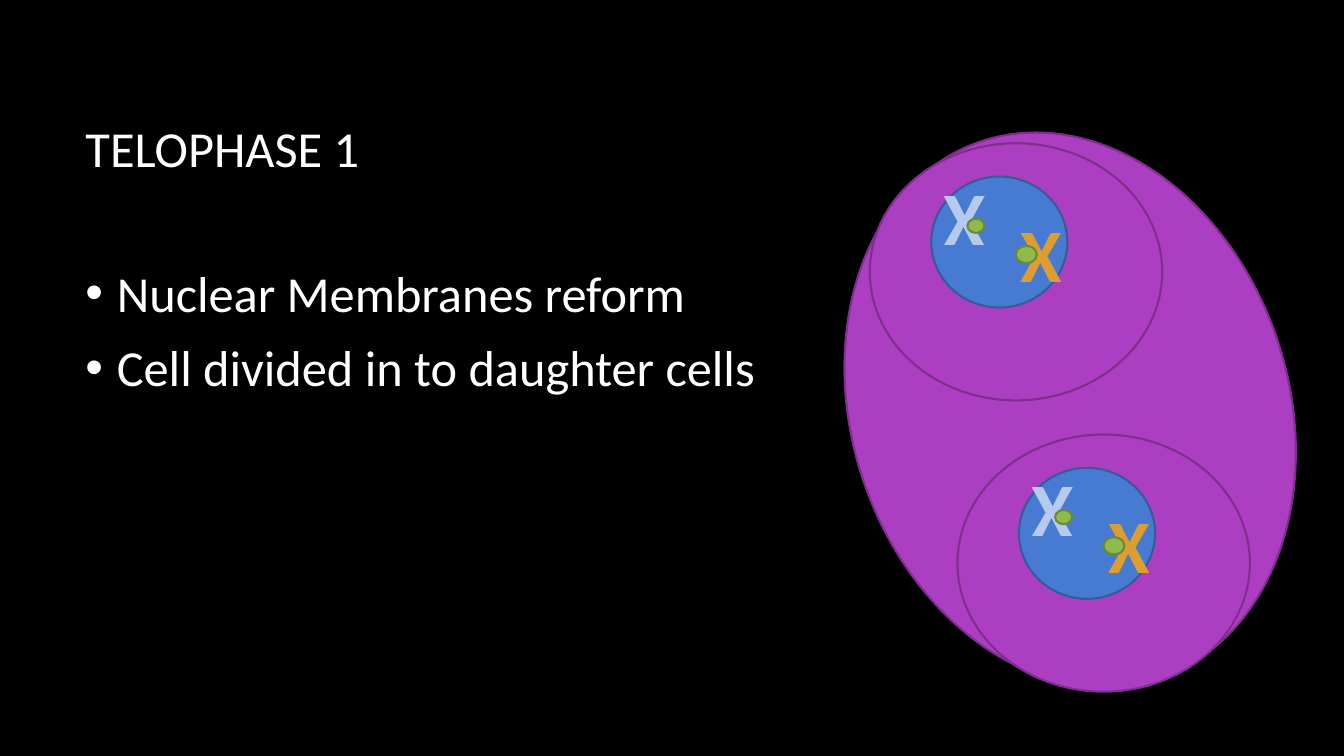
from typing import NamedTuple

import pptx
import pptx.dml.color
import pptx.enum.shapes
import pptx.enum.text
import pptx.oxml
import pptx.util
from pptx.util import Cm, Pt

FONT = "Calibri"
WHITE = "FFFFFF"
NS = 'xmlns:a="http://schemas.openxmlformats.org/drawingml/2006/main"'


class Box(NamedTuple):
    left: float
    top: float
    width: float
    height: float


class Oval(NamedTuple):
    box: Box
    fill: str
    line: str
    rotation: float = 0


class Chromosome(NamedTuple):
    box: Box
    color: str
    outline: str
    outline_pt: float
    rotation: float = 0


MEMBRANE = ("AC3EC1", "7F2E8F")
CENTROMERE = ("90BA4C", "6B8A38")
PARENT_CELL = Oval(Box(21.46, 3.2, 11.02, 14.25), *MEMBRANE, rotation=-18.2)

# Parts of a daughter cell, placed from its top left corner
DAUGHTER_PARTS = (
    Oval(Box(0, 0, 7.37, 6.48), *MEMBRANE),
    Oval(Box(1.55, 0.84, 3.43, 3.3), "477BD1", "355B9B"),
    Chromosome(Box(3.56, 1.47, 0.66, 2.57), "DD9D31", "000000", 0.75),
    Chromosome(Box(2.26, 0.79, 0.91, 2.57), "B5CAED", "477BD1", 1.75, 180),
    Oval(Box(3.68, 2.59, 0.53, 0.43), *CENTROMERE),
    Oval(Box(2.46, 1.9, 0.43, 0.36), *CENTROMERE),
)
DAUGHTER_CELLS = ((21.92, 3.61), (24.13, 10.95))


def rgb(value: str) -> pptx.dml.color.RGBColor:
    return pptx.dml.color.RGBColor.from_string(value)


def set_all(target, values: dict) -> None:
    for name, value in values.items():
        setattr(target, name, value)


def format_font(font, color: str, **values) -> None:
    set_all(font, {"name": FONT, **values})
    font.color.rgb = rgb(color)


def place(box: Box, x: float = 0, y: float = 0) -> tuple:
    """Return the box in slide units, moved by x and y."""
    return Cm(box.left + x), Cm(box.top + y), Cm(box.width), Cm(box.height)


def add_oval(s, oval: Oval, x: float = 0, y: float = 0) -> None:
    sp = s.shapes.add_shape(pptx.enum.shapes.MSO_SHAPE.OVAL, *place(oval.box, x, y))
    sp.rotation = oval.rotation
    sp.shadow.inherit = False
    sp.fill.solid()
    sp.fill.fore_color.rgb = rgb(oval.fill)
    sp.line.color.rgb = rgb(oval.line)
    sp.line.width = Pt(1.5)


def add_chromosome(s, c: Chromosome, x: float, y: float) -> None:
    sp = s.shapes.add_textbox(*place(c.box, x, y))
    sp.rotation = c.rotation
    set_all(sp.text_frame, {
        "word_wrap": True,
        "auto_size": pptx.enum.text.MSO_AUTO_SIZE.SHAPE_TO_FIT_TEXT,
    })
    p = sp.text_frame.paragraphs[0]
    p.alignment = pptx.enum.text.PP_ALIGN.CENTER
    r = p.add_run()
    r.text = "X"
    format_font(r.font, c.color, size=Pt(54), bold=True)
    r.font._element.insert(0, pptx.oxml.parse_xml(
        f'<a:ln {NS} w="{Pt(c.outline_pt)}"><a:solidFill>'
        f'<a:srgbClr val="{c.outline}"/></a:solidFill></a:ln>'))


def add_bullet(p) -> None:
    pPr = p._p.get_or_add_pPr()
    pPr.set("marL", str(Cm(0.79)))
    pPr.set("indent", str(-Cm(0.79)))
    for xml in (f'<a:buClr {NS}><a:srgbClr val="{WHITE}"/></a:buClr>',
                f'<a:buFont {NS} typeface="Arial"/>',
                f'<a:buChar {NS} char="•"/>'):
        pPr.append(pptx.oxml.parse_xml(xml))


def fill_placeholder(sp, box: Box, lines: list[str], bullets: bool) -> None:
    left, top, width, height = place(box)
    set_all(sp, {"left": left, "top": top, "width": width, "height": height})
    tf = sp.text_frame
    tf.text = "\n".join(lines)
    set_all(tf, {
        "word_wrap": True,
        "auto_size": pptx.enum.text.MSO_AUTO_SIZE.NONE,
        "vertical_anchor": pptx.enum.text.MSO_ANCHOR.MIDDLE,
    })
    for p in tf.paragraphs:
        if bullets:
            add_bullet(p)
        set_all(p, {
            "alignment": pptx.enum.text.PP_ALIGN.LEFT,
            "space_before": Pt(0),
            "space_after": Pt(10 if bullets else 0),
        })
        format_font(p.runs[0].font, WHITE, size=Pt(36))


def main() -> None:
    prs = pptx.Presentation()
    set_all(prs, {"slide_width": Cm(33.87), "slide_height": Cm(19.05)})
    s = prs.slides.add_slide(prs.slide_layouts[1])
    s.background.fill.solid()
    s.background.fill.fore_color.rgb = rgb("000000")

    fill_placeholder(s.shapes.title, Box(1.9, 1.7, 28.14, 4.04),
                     ["TELOPHASE 1"], bullets=False)
    fill_placeholder(s.placeholders[1], Box(1.9, 5.94, 18.26, 4.72),
                     ["Nuclear Membranes reform", "Cell divided in to daughter cells"],
                     bullets=True)

    add_oval(s, PARENT_CELL)
    for x, y in DAUGHTER_CELLS:
        for part in DAUGHTER_PARTS:
            draw = add_oval if isinstance(part, Oval) else add_chromosome
            draw(s, part, x, y)
    prs.save("out.pptx")


if __name__ == "__main__":
    main()
